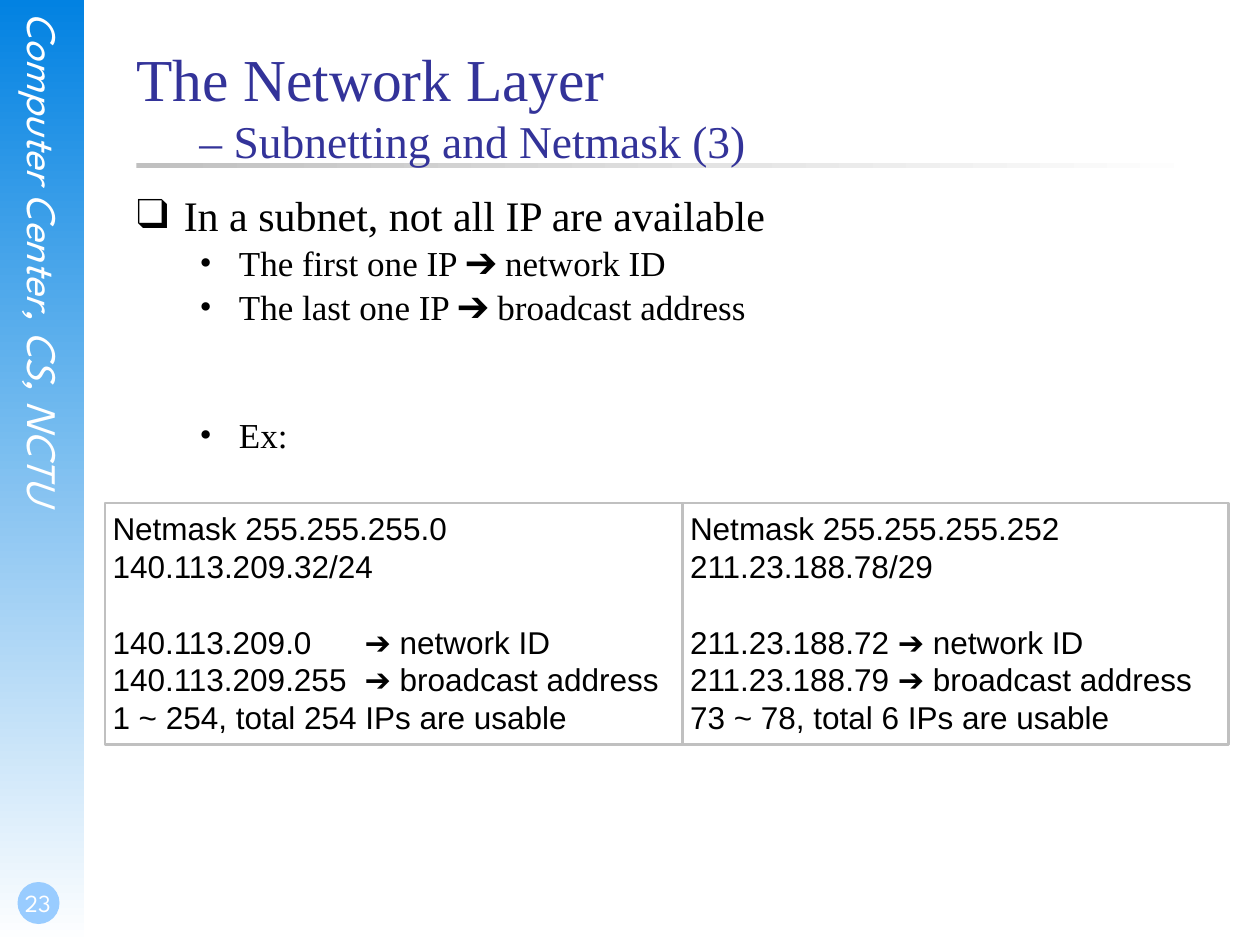
from lxml.etree import SubElement
from pptx import Presentation
from pptx.dml.color import RGBColor
from pptx.enum.shapes import MSO_SHAPE
from pptx.enum.text import MSO_ANCHOR, PP_ALIGN
from pptx.oxml.ns import qn
from pptx.util import Pt

SERIF, SANS, DISPLAY = "Times New Roman", "Arial", "League Spartan"
EXAMPLE_LINE = 21.6


def color(hex_value):
    return RGBColor.from_string(hex_value)


def add_panel(slide, box, preset=MSO_SHAPE.RECTANGLE, fill=None, line=None):
    panel = slide.shapes.add_shape(preset, *map(Pt, box))
    panel.shadow.inherit = False
    if fill:
        panel.fill.solid()
        panel.fill.fore_color.rgb = color(fill)
    else:
        panel.fill.background()
    if line:
        panel.line.color.rgb = color(line)
        panel.line.width = Pt(1.5)
    else:
        panel.line.fill.background()
    return panel


def add_gradient(slide, box, hexes, angle):
    band = add_panel(slide, box)
    band.fill.gradient()
    band.fill.gradient_angle = angle
    for stop, hex_value in zip(band.fill.gradient_stops, hexes):
        stop.color.rgb = color(hex_value)


def set_frame(frame, margins=(0, 0, 0, 0), anchor=MSO_ANCHOR.TOP):
    frame.word_wrap = True
    frame.vertical_anchor = anchor
    (frame.margin_left, frame.margin_top,
     frame.margin_right, frame.margin_bottom) = map(Pt, margins)
    return frame


def add_text_area(slide, box, **options):
    return set_frame(slide.shapes.add_textbox(*map(Pt, box)).text_frame, **options)


def add_run(paragraph, text, size, font, hex_value, italic=None):
    run = paragraph.add_run()
    run.text = text
    run.font.size = Pt(size)
    run.font.name = font
    run.font.italic = italic
    run.font.color.rgb = color(hex_value)


def next_paragraph(frame, index):
    return frame.add_paragraph() if index else frame.paragraphs[0]


def add_sidebar(slide, left, top, width, height):
    add_gradient(slide, (left, top, width, height), ("0282E2", "FFFFFF"), 270)
    label = add_text_area(slide, (left + 10.8, top + 7.2, 28.8, 368))
    label._txBody.bodyPr.set("vert", "eaVert")
    add_run(label.paragraphs[0], "Computer Center, CS, NCTU", 24, DISPLAY, "FFFFFF", True)

    add_panel(slide, (left + 10, top + height - 36, 24, 24), MSO_SHAPE.OVAL, "99CCFF")
    number = add_text_area(slide, (left, top + height - 48, 42, 36),
                           margins=(1.4, 0, 0, 3.6), anchor=MSO_ANCHOR.BOTTOM)
    number.paragraphs[0].alignment = PP_ALIGN.CENTER
    add_run(number.paragraphs[0], "23", 14, DISPLAY, "FFFFFF")


def add_title(slide, left, top, width, height):
    add_gradient(slide, (left, 93, width, 3), ("C0C0C0", "FFFFFF"), 0)
    heading = add_text_area(slide, (left, top, width, height)).paragraphs[0]
    add_run(heading, "The Network Layer", 34, SERIF, "333399")
    heading.add_line_break()
    add_run(heading, "\t– Subnetting and Netmask (3)", 26, SERIF, "333399")


def add_outline(slide, box, points):
    styles = {0: (24, 27, 27, "❑"), 1: (20, 58.5, 22.5, "•")}
    frame = add_text_area(slide, box)
    for index, (level, text, space) in enumerate(points):
        size, margin, hanging, bullet = styles[level]
        paragraph = next_paragraph(frame, index)
        paragraph.level = level
        paragraph.line_spacing = 0.8
        paragraph.space_before = Pt(space)
        properties = paragraph._p.get_or_add_pPr()
        properties.set("marL", str(Pt(margin)))
        properties.set("indent", str(-Pt(hanging)))
        SubElement(properties, qn("a:buFont")).set("typeface", SERIF)
        SubElement(properties, qn("a:buChar")).set("char", bullet)
        add_run(paragraph, text, size, SERIF, "000000")


def add_example(slide, box, network, addresses):
    panel = add_panel(slide, box, line="C0C0C0")
    frame = set_frame(panel.text_frame, margins=(4.3, 3.6, 1.4, 3.6))
    for index, text in enumerate(network + addresses):
        paragraph = next_paragraph(frame, index)
        paragraph.alignment = PP_ALIGN.LEFT
        paragraph.line_spacing = Pt(EXAMPLE_LINE)
        if index == len(network):
            paragraph.space_before = Pt(EXAMPLE_LINE)
        add_run(paragraph, text, 18, SANS, "000000")


def main():
    presentation = Presentation()
    presentation.slide_width, presentation.slide_height = Pt(720), Pt(540)
    slide = presentation.slides.add_slide(presentation.slide_layouts[6])

    add_sidebar(slide, 0, 0, 48, 540)
    add_title(slide, 78, 24, 612, 90)
    add_outline(slide, (78, 114, 558, 378), [
        (0, "In a subnet, not all IP are available", 6),
        (1, "The first one IP ➔ network ID", 5.75),
        (1, "The last one IP ➔ broadcast address", 5.75),
        (1, "Ex:", 54),
    ])
    add_example(slide, (60, 287.5, 330, 138),
                ["Netmask 255.255.255.0", "140.113.209.32/24"],
                ["140.113.209.0\t➔ network ID",
                 "140.113.209.255\t➔ broadcast address",
                 "1 ~ 254, total 254 IPs are usable"])
    add_example(slide, (390, 287.5, 312, 138),
                ["Netmask 255.255.255.252", "211.23.188.78/29"],
                ["211.23.188.72 ➔ network ID",
                 "211.23.188.79 ➔ broadcast address",
                 "73 ~ 78, total 6 IPs are usable"])
    presentation.save("out.pptx")


if __name__ == "__main__":
    main()
